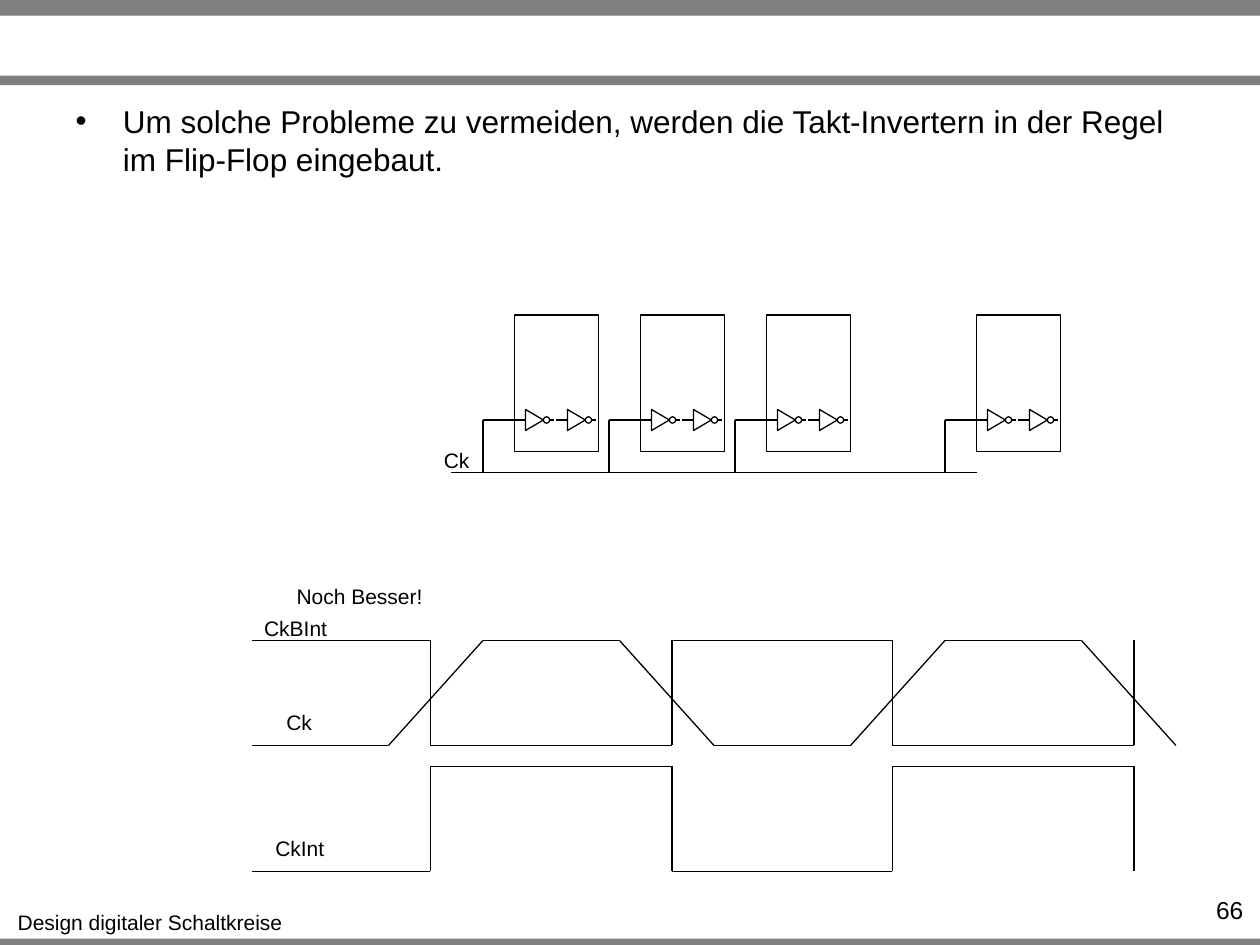
import itertools

import lxml.etree
import pptx
import pptx.dml.color
import pptx.enum.shapes
import pptx.enum.text
import pptx.oxml.ns
import pptx.util

COLUMNS, ROWS = 120, 90
CELL = pptx.util.Inches(10) // COLUMNS
SHAPE = pptx.enum.shapes.MSO_SHAPE
ALIGN = pptx.enum.text.PP_ALIGN


def cells(count):
    return pptx.util.Emu(round(count * CELL))


def colour(value):
    return pptx.dml.color.RGBColor.from_string(value)


def add_element(parent, tag, **attributes):
    return lxml.etree.SubElement(parent, pptx.oxml.ns.qn(tag), attributes)


class Sketch:
    """Style and current page; all lengths are in grid cells of 1/12 inch."""
    font, ink, bar_grey, paper = "Arial", "000000", "808080", "FFFFFF"
    line_width = pptx.util.Pt(0.75)

    def __init__(self, page):
        self.page = page

    def format_text(self, para, size, align):
        para.alignment = align
        for span in para.runs:
            span.font.name = self.font
            span.font.size = pptx.util.Pt(size)
            span.font.color.rgb = colour(self.ink)

    def shape(self, kind, left, top, width, height, fill=None, outlined=True, group=None):
        shapes = (group or self.page).shapes
        item = shapes.add_shape(kind, *map(cells, (left, top, width, height)))
        item.shadow.inherit = False
        if fill:
            item.fill.solid()
            item.fill.fore_color.rgb = colour(fill)
        else:
            item.fill.background()
        if outlined:
            item.line.color.rgb = colour(self.ink)
            item.line.width = self.line_width
        else:
            item.line.fill.background()
        return item

    def bar(self, top, height):
        self.shape(SHAPE.RECTANGLE, 0, top, COLUMNS, height, self.bar_grey, outlined=False)

    def path_lines(self, points, group=None):
        """Join consecutive points with straight lines."""
        shapes = (group or self.page).shapes
        for start, end in itertools.pairwise(points):
            line = shapes.add_connector(
                pptx.enum.shapes.MSO_CONNECTOR.STRAIGHT, *map(cells, (*start, *end)))
            line.line.color.rgb = colour(self.ink)
            line.line.width = self.line_width
            add_element(line._element.spPr, "a:effectLst")

    def label(self, text, left, top, width, height=3.6, size=12,
              align=ALIGN.CENTER, wrap=False):
        box = self.page.shapes.add_textbox(*map(cells, (left, top, width, height)))
        box.text_frame.word_wrap = wrap
        para = box.text_frame.paragraphs[0]
        para.text = text
        self.format_text(para, size, align)

    def body(self, text, left, top, width, height):
        box = self.page.placeholders[1]
        box.left, box.top, box.width, box.height = map(cells, (left, top, width, height))
        box.text_frame.auto_size = pptx.enum.text.MSO_AUTO_SIZE.NONE
        para = box.text_frame.paragraphs[0]
        para.text = text
        properties = para._p.get_or_add_pPr()
        properties.set("marL", str(cells(4.5)))
        properties.set("indent", str(-cells(4.5)))
        add_element(properties, "a:buChar", char="•")
        para.space_before = pptx.util.Pt(0)
        self.format_text(para, 18, ALIGN.LEFT)

    def inverter(self, left, middle):
        group = self.page.shapes.add_group_shape()
        self.path_lines([(left + 2.75, middle), (left + 3.75, middle)], group)
        self.shape(SHAPE.OVAL, left + 2.75, middle - 0.3, 0.6, 0.6, self.paper, group=group)
        triangle = self.shape(SHAPE.ISOSCELES_TRIANGLE, left + 0.9, middle - 0.85,
                              2, 1.7, group=group)
        triangle.rotation = 90
        self.path_lines([(left, middle), (left + 1, middle)], group)

    def flip_flop(self, left, top, bus):
        """Draw a block with two clock inverters and its tap from the bus."""
        self.shape(SHAPE.RECTANGLE, left, top, 8, 13)
        clock = top + 10
        self.path_lines([(left - 3, bus), (left - 3, clock), (left, clock)])
        for offset in (0, 4):
            self.inverter(left + offset, clock)

    def square_wave(self, start, edges, first, second):
        """Draw a wave that swaps between two levels at each edge."""
        group = self.page.shapes.add_group_shape()
        points, level, other = [(start, first)], first, second
        for edge in edges:
            points += [(edge, level), (edge, other)]
            level, other = other, level
        self.path_lines(points, group)


def main():
    deck = pptx.Presentation()
    deck.slide_width, deck.slide_height = cells(COLUMNS), cells(ROWS)
    page = deck.slides.add_slide(deck.slide_layouts[1])
    title = page.shapes.title._element
    title.getparent().remove(title)
    sketch = Sketch(page)

    for top, height in ((89.4, 0.6), (0, 1.5), (7.2, 0.9)):
        sketch.bar(top, height)
    sketch.label("Design digitaler Schaltkreise", 0.4, 86, 27.8)
    sketch.body("Um solche Probleme zu vermeiden, werden die Takt-Invertern "
                "in der Regel im Flip-Flop eingebaut.", 6, 9.1, 108, 8.9)
    sketch.label("66", 109.2, 84.7, 10.4, 2.9, 14, ALIGN.RIGHT, wrap=True)

    bus = 45
    sketch.path_lines([(43, bus), (93, bus)])
    for left in (49, 61, 73, 93):
        sketch.flip_flop(left, 30, bus)

    start, high, low = 24, 61, 71
    clock = [(start, low)]
    for rise in (37, 81):
        clock += [(rise, low), (rise + 9, high), (rise + 22, high), (rise + 31, low)]
    sketch.path_lines(clock)
    edges = (41, 64, 85, 108)
    sketch.square_wave(start, edges, high, low)
    sketch.square_wave(start, edges, low + 12, high + 12)

    for text, left, top, width in (
            ("Ck", 41, 42, 5), ("Ck", 26, 67, 5), ("CkBInt", 23.9, 58, 8.5),
            ("Noch Besser!", 27, 55, 14.5), ("CkInt", 25, 79, 7.1)):
        sketch.label(text, left, top, width)

    deck.save("out.pptx")


if __name__ == "__main__":
    main()
